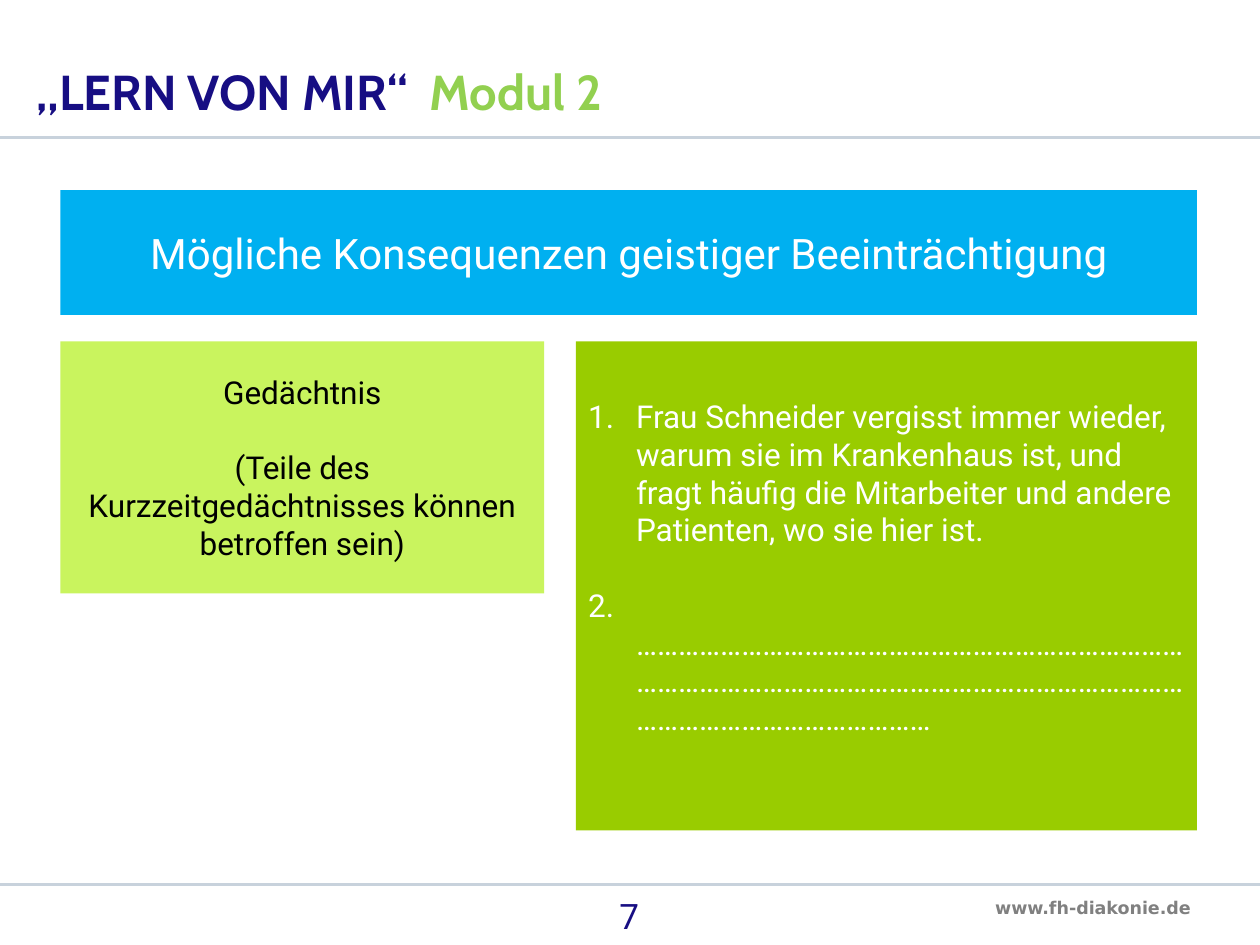
from pptx import Presentation
from pptx.dml.color import RGBColor
from pptx.enum.shapes import MSO_CONNECTOR as Connector, MSO_SHAPE as Shape
from pptx.enum.text import MSO_ANCHOR as Anchor, PP_ALIGN as Align
from pptx.oxml.ns import qn
from pptx.util import Inches, Pt
from lxml.etree import SubElement

NAVY, GREEN, WHITE, BLACK = "170E83", "92D050", "FFFFFF", "000000"
SKY, LIME, LEAF, RULE, GRAY = "00B0F0", "C9F45E", "99CC00", "C8D2DC", "808080"


def color(value):
    return RGBColor.from_string(value)


class SlideBuilder:
    body_font = "Roboto"
    title_font = "Cabin"
    footer_font = "DejaVu Sans"

    def __init__(self, deck):
        self.slide = deck.slides.add_slide(deck.slide_layouts[5])

    def add_span(self, para, text, size, value, font=None, bold=False):
        span = para.add_run()
        span.text = text
        span.font.name = font or self.body_font
        span.font.size = Pt(size)
        span.font.bold = bold
        span.font.color.rgb = color(value)

    def add_paragraphs(self, frame, texts, size, value, align, gap=0, numbered=False):
        for index, text in enumerate(texts):
            para = frame.add_paragraph() if index else frame.paragraphs[0]
            para.alignment = align
            if index:
                para.space_before = Pt(gap)
            if numbered:
                properties = para._p.get_or_add_pPr()
                properties.set("marL", str(Inches(0.38)))
                properties.set("indent", str(-Inches(0.38)))
                SubElement(properties, qn("a:buAutoNum"), type="arabicPeriod")
            self.add_span(para, text, size, value)

    def title(self, left, top, width, height, spans):
        box = self.slide.shapes.title
        box.left, box.top = Inches(left), Inches(top)
        box.width, box.height = Inches(width), Inches(height)
        box.text_frame.vertical_anchor = Anchor.BOTTOM
        para = box.text_frame.paragraphs[0]
        para.alignment = Align.LEFT
        para.line_spacing = 0.9
        for text, value in spans:
            self.add_span(para, text, 28, value, self.title_font, True)

    def rule(self, top):
        line = self.slide.shapes.add_connector(
            Connector.STRAIGHT, Inches(0), Inches(top), Inches(10), Inches(top))
        line.line.color.rgb = color(RULE)
        line.line.width = Pt(1.5)
        SubElement(line._element.spPr, qn("a:effectLst"))

    def label(self, left, top, width, height, text, size, value,
              font=None, bold=False, align=Align.LEFT, wrap=True):
        box = self.slide.shapes.add_textbox(
            Inches(left), Inches(top), Inches(width), Inches(height))
        box.text_frame.word_wrap = wrap
        para = box.text_frame.paragraphs[0]
        para.alignment = align
        self.add_span(para, text, size, value, font, bold)

    def panel(self, left, top, width, height, fill, texts, size, value,
              align=Align.CENTER, gap=0, numbered=False, bottom=0.05):
        box = self.slide.shapes.add_shape(
            Shape.RECTANGLE, Inches(left), Inches(top), Inches(width), Inches(height))
        box.shadow.inherit = False
        box.fill.solid()
        box.fill.fore_color.rgb = color(fill)
        box.line.fill.background()
        frame = box.text_frame
        frame.word_wrap = True
        frame.vertical_anchor = Anchor.MIDDLE
        frame.margin_bottom = Inches(bottom)
        self.add_paragraphs(frame, texts, size, value, align, gap, numbered)


def main():
    deck = Presentation()
    deck.slide_width, deck.slide_height = Inches(10), Inches(7.5)
    page = SlideBuilder(deck)

    page.label(7.8, 7.07, 1.78, 0.27, "www.fh-diakonie.de", 10, GRAY,
               page.footer_font, bold=True, wrap=False)
    for top in (1.09, 7.02):
        page.rule(top)
    page.title(0.19, 0.43, 6.67, 0.58, [("„LERN VON MIR“  ", NAVY), ("Modul 2", GREEN)])
    page.label(3.83, 7.05, 2.33, 0.45, "7", 20, NAVY, align=Align.CENTER)

    page.panel(0.48, 1.51, 9.02, 0.99, SKY,
               ["Mögliche Konsequenzen geistiger Beeinträchtigung"], 24, WHITE)
    page.panel(0.48, 2.71, 3.84, 2, LIME,
               ["Gedächtnis", "(Teile des Kurzzeitgedächtnisses können betroffen sein)"],
               18, BLACK, gap=21.5)
    page.panel(4.57, 2.71, 4.93, 3.88, LEAF,
               ["Frau Schneider vergisst immer wieder, warum sie im Krankenhaus ist, "
                "und fragt häufig die Mitarbeiter und andere Patienten, wo sie hier ist.",
                " " + "…" * 66],
               18, WHITE, Align.LEFT, gap=21.5, numbered=True, bottom=0.35)

    deck.save("out.pptx")


if __name__ == "__main__":
    main()
